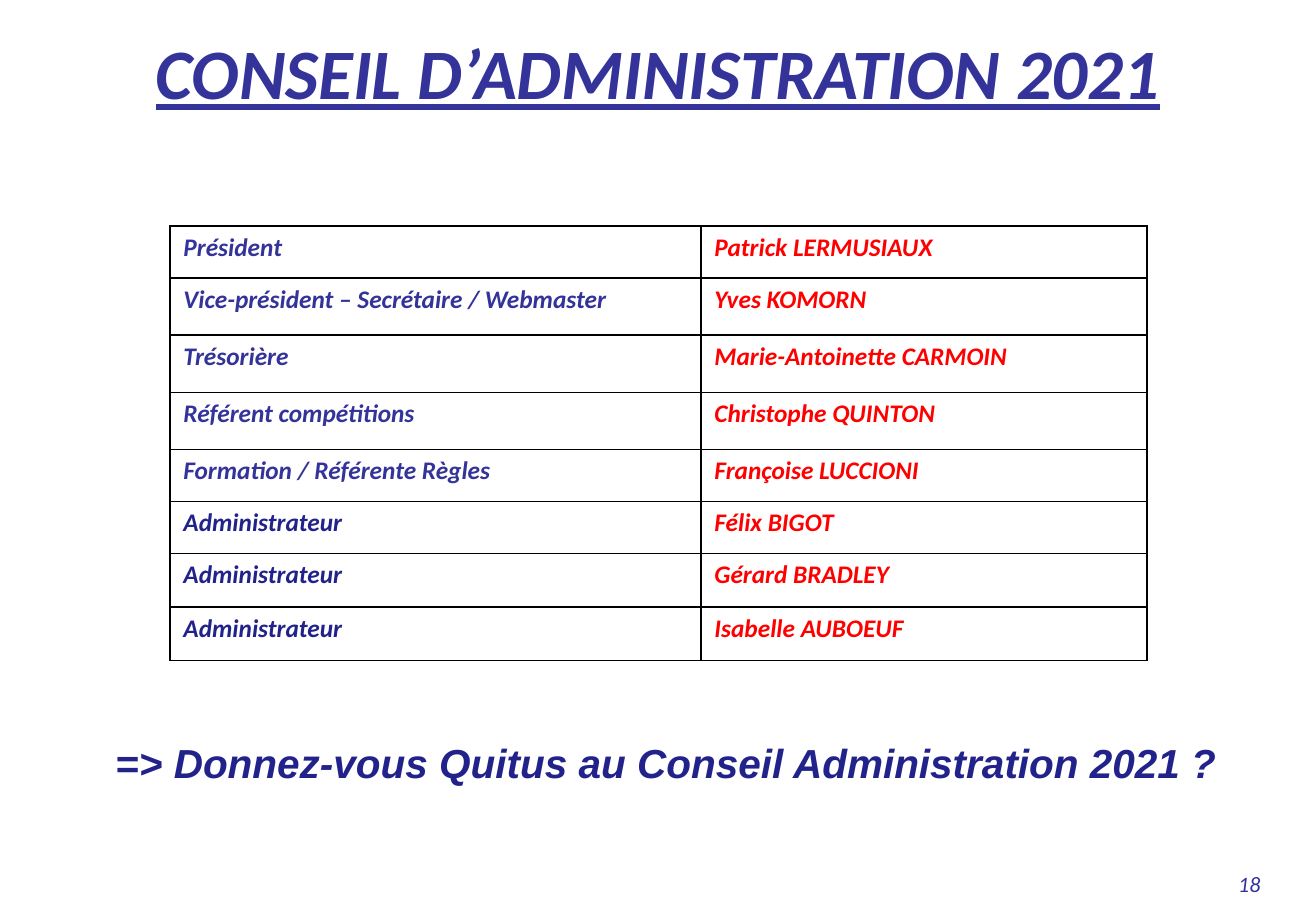
from dataclasses import dataclass

from lxml import etree
from pptx import Presentation
from pptx.dml.color import RGBColor
from pptx.enum.text import MSO_ANCHOR, MSO_AUTO_SIZE, PP_ALIGN
from pptx.oxml.ns import qn
from pptx.util import Inches, Pt

TOP = MSO_ANCHOR.TOP
NO_FIT = MSO_AUTO_SIZE.NONE
LEFT, CENTER, RIGHT = PP_ALIGN.LEFT, PP_ALIGN.CENTER, PP_ALIGN.RIGHT


@dataclass(frozen=True)
class Theme:
    blue: str = "333399"
    navy: str = "22228B"
    red: str = "FF0000"
    border: str = "000000"
    font: str = "Calibri"
    question_font: str = "Arial"
    title: int = 42
    question: int = 24
    table: int = 15
    number: int = 13


T = Theme()


def write(tf, text, size, color, align=LEFT, bold=True, name=T.font):
    tf.word_wrap = True
    p = tf.paragraphs[0]
    p.text = text
    p.alignment = align
    font = p.runs[0].font
    font.name = name
    font.size = Pt(size)
    font.bold = bold
    font.italic = True
    font.color.rgb = RGBColor.from_string(color)
    return font


def add_borders(cell):
    tcPr = cell._tc.get_or_add_tcPr()
    for i, side in enumerate(("a:lnL", "a:lnR", "a:lnT", "a:lnB")):
        ln = etree.Element(qn(side), w=str(Pt(1)))
        fill = etree.SubElement(ln, qn("a:solidFill"))
        etree.SubElement(fill, qn("a:srgbClr"), val=T.border)
        tcPr.insert(i, ln)


prs = Presentation()
prs.slide_width = Inches(10.83)
prs.slide_height = Inches(7.5)
s = prs.slides.add_slide(prs.slide_layouts[5])

title = s.shapes.title
title.left, title.top = Inches(0.81), Inches(0.16)
title.width, title.height = Inches(9.21), Inches(1.06)
tf = title.text_frame
tf.auto_size = NO_FIT
tf.vertical_anchor = TOP
tf.margin_top = Inches(0.08)
font = write(tf, "CONSEIL D’ADMINISTRATION 2021", T.title, T.blue, CENTER)
font.underline = True

members = [
    ("Président", "Patrick LERMUSIAUX", T.blue, 0.43),
    ("Vice-président – Secrétaire / Webmaster", "Yves KOMORN", T.blue, 0.47),
    ("Trésorière", "Marie-Antoinette CARMOIN", T.blue, 0.47),
    ("Référent compétitions", "Christophe QUINTON", T.blue, 0.47),
    ("Formation / Référente Règles", "Françoise LUCCIONI", T.blue, 0.43),
    ("Administrateur", "Félix BIGOT", T.navy, 0.43),
    ("Administrateur", "Gérard BRADLEY", T.navy, 0.44),
    ("Administrateur", "Isabelle AUBOEUF", T.navy, 0.44),
]
table = s.shapes.add_table(len(members), 2, Inches(1.4), Inches(1.86),
                           Inches(8.04), Inches(3.58)).table
table.first_row = False
table.horz_banding = False
table.columns[0].width = Inches(4.37)
table.columns[1].width = Inches(3.67)
for row, (role, member, role_color, height) in zip(table.rows, members):
    row.height = Inches(height)
    for cell, text, color in zip(row.cells, (role, member), (role_color, T.red)):
        cell.fill.background()
        cell.margin_left = cell.margin_right = Inches(0.11)
        cell.margin_top = cell.margin_bottom = Inches(0.05)
        write(cell.text_frame, text, T.table, color)
        add_borders(cell)

question = s.shapes.add_textbox(Inches(0.85), Inches(6.03), Inches(9.92), Inches(0.5))
write(question.text_frame, "=> Donnez-vous Quitus au Conseil Administration 2021 ?",
      T.question, T.navy, name=T.question_font)

number = s.shapes.add_textbox(Inches(8.25), Inches(7.12), Inches(2.22), Inches(0.36))
write(number.text_frame, "18", T.number, T.blue, RIGHT, bold=False)

prs.save("out.pptx")
